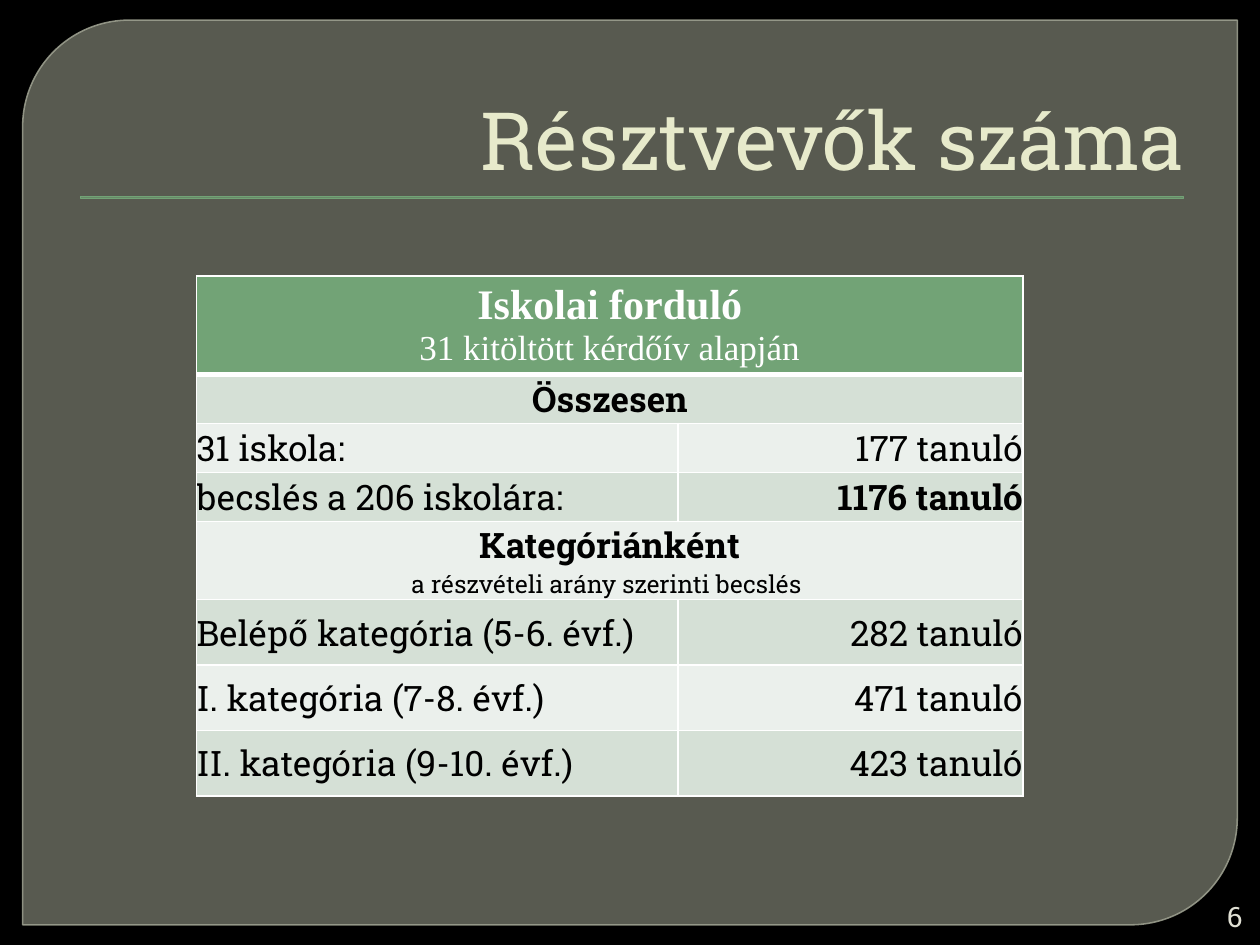
import pptx
import pptx.util
import pptx.dml.color
import pptx.enum.shapes
import pptx.enum.text
import pptx.oxml
import pptx.oxml.ns

Inches = pptx.util.Inches
Pt = pptx.util.Pt
Shape = pptx.enum.shapes.MSO_SHAPE
Align = pptx.enum.text.PP_ALIGN
Anchor = pptx.enum.text.MSO_ANCHOR
NS = pptx.oxml.ns.nsdecls("a")

SLAB = "Roboto Slab"
SERIF = "Times New Roman"
GREEN = "72A376"
BANDS = ("D5E0D6", "EBF0EC")
COLS = (3.82, 2.74)

# Each row: height, then one list of (text, format) lines per cell
HEAD = dict(font=SERIF, color="FFFFFF", align=Align.CENTER)
MID = dict(align=Align.CENTER)
ROWS = [
    (0.78, [[("Iskolai forduló", dict(HEAD, size=24, bold=True)),
             ("31 kitöltött kérdőív alapján", HEAD)]]),
    (0.39, [[("Összesen", dict(MID, bold=True))]]),
    (0.39, ["31 iskola:", "177 tanuló"]),
    (0.39, ["becslés a 206 iskolára:",
            [("1176 tanuló", dict(align=Align.RIGHT, bold=True))]]),
    (0.62, [[("Kategóriánként", dict(MID, bold=True)),
             ("a részvételi arány szerinti becslés ", dict(MID, size=14))]]),
    (0.52, ["Belépő kategória (5-6. évf.)", "282 tanuló"]),
    (0.52, ["I. kategória (7-8. évf.)", "471 tanuló"]),
    (0.52, ["II. kategória (9-10. évf.)", "423 tanuló"]),
]


def rgb(code):
    return pptx.dml.color.RGBColor.from_string(code)


def paint(fill, code, alpha=None):
    """Fill with a solid colour, with opacity in percent if given."""
    fill.solid()
    fill.fore_color.rgb = rgb(code)
    if alpha:
        node = fill._xPr.find(".//" + pptx.oxml.ns.qn("a:srgbClr"))
        node.append(pptx.oxml.parse_xml(
            f'<a:alpha {NS} val="{alpha * 1000}"/>'))


def write(frame, text, first=True, size=20, font=SLAB, color="000000",
          bold=False, align=Align.LEFT):
    """Write one paragraph, in the first one or in a new one."""
    para = frame.paragraphs[0] if first else frame.add_paragraph()
    para.alignment = align
    run = para.add_run()
    run.text = text
    run.font.size = Pt(size)
    run.font.name = font
    run.font.bold = bold
    run.font.color.rgb = rgb(color)


def label(slide, box, text, anchor, **style):
    shape = slide.shapes.add_textbox(*map(Inches, box))
    frame = shape.text_frame
    frame.word_wrap = True
    frame.vertical_anchor = anchor
    write(frame, text, align=Align.RIGHT, **style)


def panel(slide, box):
    shape = slide.shapes.add_shape(Shape.ROUND_2_DIAG_RECTANGLE,
                                   *map(Inches, box))
    shape.shadow.inherit = False
    shape.adjustments[0] = 0.118
    shape.adjustments[1] = 0
    paint(shape.fill, "888B7B", 65)
    shape.line.width = Pt(0.87)
    paint(shape.line.fill, "9DA090", 88)


def rule(slide, box):
    shape = slide.shapes.add_shape(Shape.RECTANGLE, *map(Inches, box))
    shape.shadow.inherit = False
    paint(shape.fill, GREEN)
    shape.line.width = Pt(0.25)
    paint(shape.line.fill, GREEN)


def edge(cell, top, bottom):
    """Draw white borders; to be called before the cell is filled."""
    props = cell._tc.get_or_add_tcPr()
    for side, width in zip("LRTB", (1, 1, top, bottom)):
        props.append(pptx.oxml.parse_xml(
            f'<a:ln{side} {NS} w="{Pt(width)}"><a:solidFill>'
            f'<a:srgbClr val="FFFFFF"/></a:solidFill></a:ln{side}>'))


def count(slide, box):
    """Place the table of participant counts."""
    grid = slide.shapes.add_table(len(ROWS), len(COLS),
                                  *map(Inches, box)).table
    for col, width in zip(grid.columns, COLS):
        col.width = Inches(width)
    for i, (height, parts) in enumerate(ROWS):
        grid.rows[i].height = Inches(height)
        for cell in grid.rows[i].cells:
            edge(cell, 3 if i == 1 else 1, 3 if i == 0 else 1)
            paint(cell.fill, BANDS[(i - 1) % 2] if i else GREEN)
            cell.vertical_anchor = Anchor.MIDDLE
            cell.margin_left = cell.margin_right = 0
            cell.margin_top = cell.margin_bottom = Inches(0 if i else 0.02)
        if len(parts) == 1:
            grid.cell(i, 0).merge(grid.cell(i, 1))
        for j, lines in enumerate(parts):
            if isinstance(lines, str):
                side = Align.RIGHT if j else Align.LEFT
                lines = [(lines, dict(align=side))]
            for k, (text, style) in enumerate(lines):
                write(grid.cell(i, j).text_frame, text, first=k == 0, **style)


def main():
    deck = pptx.Presentation()
    deck.slide_width = Inches(10)
    deck.slide_height = Inches(7.5)
    slide = deck.slides.add_slide(deck.slide_layouts[6])
    paint(slide.background.fill, "000000")
    panel(slide, (0.18, 0.16, 9.64, 7.18))
    rule(slide, (0.64, 1.56, 8.75, 0.01))
    label(slide, (0.5, 0.28, 9, 1.25), "Résztvevők száma", Anchor.BOTTOM,
          size=46, color="E7EACB")
    label(slide, (9.45, 7.12, 0.51, 0.3), "6", Anchor.MIDDLE,
          size=16, color="E0E0D4")
    count(slide, (1.56, 2.19, sum(COLS), sum(row[0] for row in ROWS)))
    deck.save("out.pptx")


if __name__ == "__main__":
    main()
